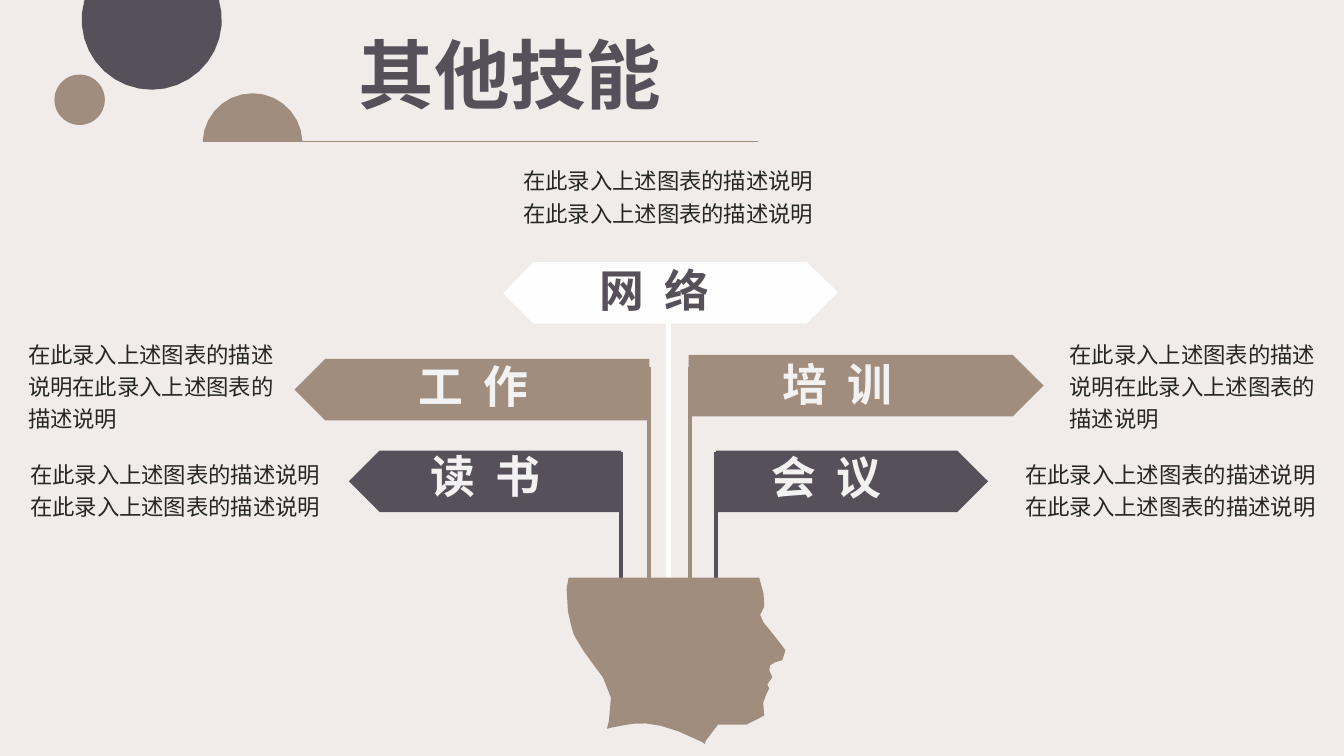
from dataclasses import dataclass
from math import asin, cos, dist, pi, sin

from lxml.etree import SubElement
from pptx import Presentation
from pptx.dml.color import RGBColor
from pptx.enum.shapes import MSO_CONNECTOR, MSO_SHAPE
from pptx.enum.text import MSO_AUTO_SIZE
from pptx.oxml.ns import qn
from pptx.util import Pt

PX = 9144
FONT = "Noto Sans CJK SC"
COLORS = {
    "background": "F1ECE9",
    "plum": "56505A",
    "taupe": "A08D7E",
    "white": "FEFEFE",
    "pale": "F2F2F2",
    "ink": "262626",
}
DESCRIPTION = "在此录入上述图表的描述说明" * 2
Point = tuple[float, float]


@dataclass
class Stem:
    x: int
    top: int
    bottom: int
    color: str


@dataclass
class Sign:
    left: int
    top: int
    width: int
    color: str
    points_left: bool


@dataclass
class Label:
    text: str
    left: int
    top: int
    width: int
    height: int
    color: str
    size: int
    bold: bool = True
    wrap: bool = False
    line_spacing: float = 1.0
    tracking: int = 0


def sign_label(text: str, left: int, top: int, color: str = "pale") -> Label:
    return Label(text, left, top, 156, 64, color, 32, tracking=360)


def description(left: int, top: int, width: int, height: int) -> Label:
    return Label(DESCRIPTION, left, top, width, height, "ink", 16,
                 bold=False, wrap=True, line_spacing=1.2)


STEMS = [
    Stem(663, 316, 597, "white"),
    Stem(684, 364, 615, "taupe"),
    Stem(710, 448, 699, "plum"),
    Stem(644, 364, 615, "taupe"),
    Stem(616, 448, 699, "plum"),
]
SIGNS = [
    Sign(346, 447, 270, "plum", True),
    Sign(292, 356, 352, "taupe", True),
    Sign(683, 352, 352, "taupe", False),
    Sign(710, 447, 270, "plum", False),
]
SIGN_HEIGHT = 61
NETWORK_SIGN = [(529, 260), (800, 260), (831, 290), (800, 321), (529, 321), (499, 291)]
LABELS = [
    Label("其他技能", 346, 23, 325, 101, "plum", 54),
    sign_label("读 书", 417, 440),
    sign_label("工 作", 405, 351),
    sign_label("网 络", 585, 256, "plum"),
    sign_label("培 训", 766, 349),
    sign_label("会 议", 755, 441),
    description(20, 447, 323, 75),
    description(509, 156, 323, 75),
    description(1007, 447, 323, 75),
    description(1051, 328, 279, 107),
    description(18, 328, 280, 107),
]
HEAD = [
    [(564, 573)], [(753, 573)],
    [(757, 585), (759, 594), (758, 602)],
    [(758, 602), (754, 605), (754, 610)],
    [(754, 612), (755, 615), (757, 617)],
    [(765, 626), (778, 644), (779, 645)],
    [(780, 647), (781, 652), (776, 655)],
    [(773, 656), (771, 657), (769, 657)],
    [(767, 658), (765, 659), (764, 660)],
    [(761, 662), (761, 663), (763, 665)],
    [(766, 667), (767, 669), (766, 672)],
    [(766, 674), (765, 676), (761, 679)],
    [(762, 680), (763, 682), (763, 683)],
    [(763, 686), (762, 687), (760, 689)],
    [(756, 692), (756, 694), (757, 697)],
    [(757, 700), (759, 706), (758, 710)],
    [(755, 715), (750, 718), (740, 719)],
    [(712, 719)],
    [(707, 721), (701, 725), (700, 735)],
    [(699, 738)], [(696, 736)],
    [(645, 710), (628, 718), (606, 722)],
    [(602, 723)], [(604, 715)],
    [(604, 715), (608, 698), (606, 692)],
    [(606, 685), (605, 683), (598, 672)],
    [(592, 664)],
    [(583, 652), (573, 638), (571, 633)],
    [(569, 629)],
    [(569, 628), (561, 609), (562, 584)],
]


def rgb(color: str) -> RGBColor:
    return RGBColor.from_string(COLORS[color])


def paint(shape, color: str) -> None:
    shape.shadow.inherit = False
    shape.fill.solid()
    shape.fill.fore_color.rgb = rgb(color)
    shape.line.fill.background()


def arc(center: Point, radius: float, start: float, end: float, steps: int) -> list[Point]:
    angles = [start + (end - start) * step / steps for step in range(steps + 1)]
    return [(center[0] + radius * cos(angle), center[1] + radius * sin(angle))
            for angle in angles]


def flatten(segments: list[list[Point]], spacing: int = 16) -> list[Point]:
    points = list(segments[0])
    for segment in segments[1:]:
        if len(segment) == 1:
            points += segment
            continue
        controls = [points[-1], *segment]
        steps = max(1, round(dist(controls[0], controls[-1]) / spacing))
        for step in range(1, steps + 1):
            t = step / steps
            weights = ((1 - t) ** 3, 3 * t * (1 - t) ** 2, 3 * t * t * (1 - t), t ** 3)
            points.append((sum(w * p[0] for w, p in zip(weights, controls)),
                           sum(w * p[1] for w, p in zip(weights, controls))))
    return points


def draw_outline(page, points: list[Point], color: str) -> None:
    corners = [(round(x * PX), round(y * PX)) for x, y in points]
    builder = page.shapes.build_freeform(*corners[0])
    builder.add_line_segments(corners[1:], close=True)
    paint(builder.convert_to_shape(), color)


def draw_line(page, start: Point, end: Point, color: str, width: float) -> None:
    line = page.shapes.add_connector(
        MSO_CONNECTOR.STRAIGHT, *(value * PX for value in (*start, *end)))
    line.line.color.rgb = rgb(color)
    line.line.width = Pt(width)
    SubElement(line._element.spPr, qn("a:effectLst"))


def draw_sign(page, sign: Sign) -> None:
    plate = page.shapes.add_shape(MSO_SHAPE.PENTAGON, sign.left * PX, sign.top * PX,
                                  sign.width * PX, SIGN_HEIGHT * PX)
    plate.rotation = 180 if sign.points_left else 0
    paint(plate, sign.color)


def draw_label(page, label: Label) -> None:
    box = page.shapes.add_textbox(label.left * PX, label.top * PX,
                                  label.width * PX, label.height * PX)
    box.text_frame.word_wrap = label.wrap
    box.text_frame.auto_size = MSO_AUTO_SIZE.SHAPE_TO_FIT_TEXT
    para = box.text_frame.paragraphs[0]
    para.text = label.text
    para.line_spacing = label.line_spacing
    para.font.size = Pt(label.size)
    para.font.bold = label.bold
    para.font.color.rgb = rgb(label.color)
    para.font.name = FONT
    properties = para._p.pPr.find(qn("a:defRPr"))
    properties.set("spc", str(label.tracking))
    SubElement(properties, qn("a:ea"), typeface=FONT)


def main() -> None:
    deck = Presentation()
    deck.slide_width, deck.slide_height = 1333 * PX, 750 * PX
    page = deck.slides.add_slide(deck.slide_layouts[6])
    page.background.fill.solid()
    page.background.fill.fore_color.rgb = rgb("background")

    cut = asin(19.5 / 69.5)
    draw_outline(page, arc((150.5, 19.5), 69.5, -cut, pi + cut, 20), "plum")
    dot = page.shapes.add_shape(MSO_SHAPE.OVAL, 54 * PX, 74 * PX, 50 * PX, 50 * PX)
    paint(dot, "taupe")
    dip = asin(2 / 50)
    draw_outline(page, arc((250.5, 142), 49.5, pi + dip, 2 * pi - dip, 14), "taupe")
    draw_line(page, (201, 140), (752, 140), "taupe", 0.5)

    for stem in STEMS:
        draw_line(page, (stem.x, stem.top), (stem.x, stem.bottom), stem.color, 3)
    draw_outline(page, flatten(HEAD), "taupe")
    for sign in SIGNS:
        draw_sign(page, sign)
    draw_outline(page, NETWORK_SIGN, "white")
    for label in LABELS:
        draw_label(page, label)
    deck.save("out.pptx")


if __name__ == "__main__":
    main()
